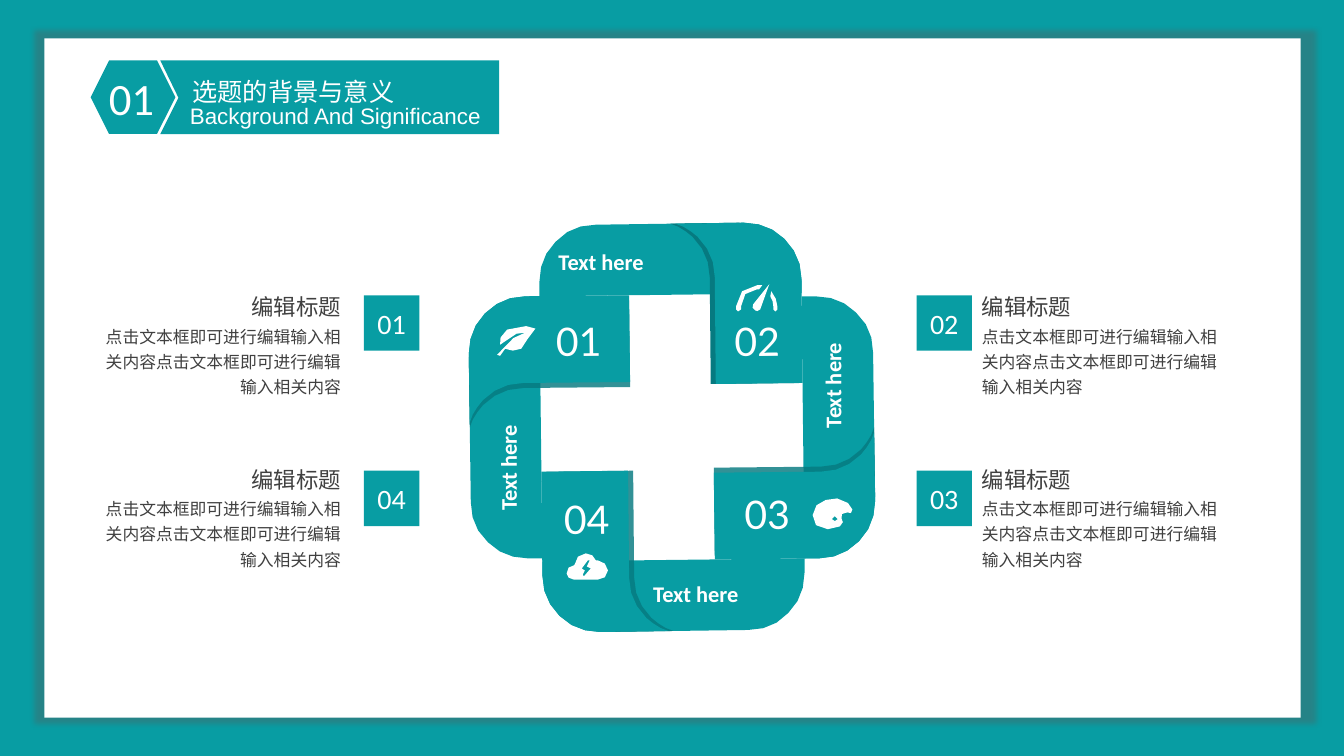
from lxml import etree
from pptx import Presentation
from pptx.dml.color import RGBColor
from pptx.enum.shapes import MSO_SHAPE as SHAPE
from pptx.enum.text import MSO_ANCHOR as ANCHOR, MSO_AUTO_SIZE as FIT, PP_ALIGN as ALIGN
from pptx.oxml import parse_xml
from pptx.oxml.ns import nsdecls, qn
from pptx.util import Inches, Pt

TEAL = RGBColor(0x08, 0x9D, 0xA3)
DARK_TEAL = RGBColor(0x06, 0x7A, 0x80)
WHITE = RGBColor(0xFF, 0xFF, 0xFF)
GRAY = RGBColor(0x40, 0x40, 0x40)
CJK = "Noto Sans CJK SC"

prs = Presentation()
prs.slide_width, prs.slide_height = Inches(13.33), Inches(7.5)
slide = prs.slides.add_slide(prs.slide_layouts[5])
slide.background.fill.solid()
slide.background.fill.fore_color.rgb = TEAL
shapes = slide.shapes


def write(holder, text, size, font, color=WHITE, align=ALIGN.LEFT, wrap=True):
    frame = holder.text_frame
    frame.text = text
    frame.word_wrap = wrap
    frame.auto_size = FIT.SHAPE_TO_FIT_TEXT
    paragraph = frame.paragraphs[0]
    paragraph.alignment = align
    run = paragraph.runs[0]
    run.font.size, run.font.name, run.font.color.rgb = Pt(size), font, color
    for properties in holder.element.iter(qn("a:rPr")):
        etree.SubElement(properties, qn("a:ea"), typeface=font)
    return paragraph


def draw(contours, color, smoothness=3):
    builder = None
    for start, *steps in contours:
        points = [start]
        for step in steps:
            if len(step) == 2:
                points.append(step)
                continue
            x0, y0 = points[-1]
            x1, y1, x2, y2, x3, y3 = step
            for i in range(1, smoothness + 1):
                t = i / smoothness
                a, b, c, d = (1 - t) ** 3, 3 * t * (1 - t) ** 2, 3 * t * t * (1 - t), t ** 3
                points.append((a * x0 + b * x1 + c * x2 + d * x3, a * y0 + b * y1 + c * y2 + d * y3))
        points = [(Inches(x), Inches(y)) for x, y in points]
        if builder is None:
            builder = shapes.build_freeform(*points[0])
        else:
            builder.move_to(*points[0])
        builder.add_line_segments(points[1:], close=True)
    outline = builder.convert_to_shape()
    outline.shadow.inherit = False
    outline.fill.solid()
    outline.fill.fore_color.rgb = color
    outline.line.fill.background()
    return outline


card = shapes.add_shape(SHAPE.RECTANGLE, Inches(0.44), Inches(0.38), Inches(12.46), Inches(6.74))
card.fill.solid()
card.fill.fore_color.rgb = WHITE
card.line.fill.background()
card.element.spPr.append(parse_xml(
    f'<a:effectLst {nsdecls("a")}><a:outerShdw blurRad="50800" dist="25400" dir="0" sx="102000" sy="102000" '
    'algn="ctr" rotWithShape="0"><a:srgbClr val="595959"><a:alpha val="36000"/></a:srgbClr>'
    '</a:outerShdw></a:effectLst>'))

draw([[(1.59, 0.6), (4.95, 0.6), (4.95, 1.33), (1.59, 1.33), (1.77, 0.97)]], TEAL)
badge = shapes.add_shape(SHAPE.HEXAGON, Inches(0.9), Inches(0.6), Inches(0.84), Inches(0.73))
badge.shadow.inherit = False
badge.fill.solid()
badge.fill.fore_color.rgb = TEAL
badge.line.fill.background()
chapter = shapes.add_textbox(Inches(0.87), Inches(0.65), Inches(0.87), Inches(0.64))
write(chapter, "01", 32, "Calibri", align=ALIGN.CENTER)

title = shapes.title
title.left, title.top, title.width, title.height = Inches(1.81), Inches(0.41), Inches(2.22), Inches(0.62)
write(title, "选题的背景与意义", 18, CJK, wrap=False).line_spacing = 2.0
title.text_frame.vertical_anchor = ANCHOR.TOP
chapter.element.addnext(title.element)
subtitle = shapes.add_textbox(Inches(0.58), Inches(0.96), Inches(5.49), Inches(0.37))
write(subtitle, "Background And Significance", 16, "Arial", align=ALIGN.CENTER)

band = [(7.78, 2.37), (7.89, 2.48, 7.95, 2.61, 7.95, 2.77), (7.95, 2.91), (5.35, 2.94), (5.35, 2.8),
        (5.35, 2.64, 5.4, 2.51, 5.51, 2.4), (5.62, 2.28, 5.75, 2.23, 5.91, 2.23), (7.38, 2.21),
        (7.53, 2.21, 7.67, 2.26, 7.78, 2.37)]
fold = [(7.38, 2.21), (7.53, 2.21, 7.67, 2.26, 7.78, 2.37), (7.89, 2.48, 7.95, 2.61, 7.95, 2.77),
        (7.96, 3.8), (7.1, 3.81), (7.09, 2.75), (7.09, 2.59, 7.03, 2.46, 6.92, 2.35),
        (6.85, 2.29, 6.78, 2.24, 6.7, 2.22)]
hubs = [(6.67, 4.24), (6.65, 4.26), (6.66, 4.24), (6.68, 4.22)]
layers = [(band, 0, TEAL, False)] * 4 + [(fold, -0.05, DARK_TEAL, True), (fold, 0, TEAL, False)] * 4
turns = [0, 1, 2, 3, 0, 0, 1, 1, 2, 2, 3, 3]
for (ribbon, shift, color, shaded), turn in zip(layers, turns):
    hub_x, hub_y = hubs[turn]
    turned = []
    for step in ribbon:
        place = []
        for x, y in zip(step[::2], step[1::2]):
            x, y = x + shift - hubs[0][0], y - hubs[0][1]
            for _ in range(turn):
                x, y = -y, x
            place += [hub_x + x, hub_y + y]
        turned.append(tuple(place))
    piece = draw([turned], color)
    if shaded and turn:
        for value in piece.element.spPr.iter(qn("a:srgbClr")):
            etree.SubElement(value, qn("a:alpha"), val="82000")

for number, x, y in [("02", 7.28, 3.14), ("03", 7.38, 4.86), ("01", 5.51, 3.14), ("04", 5.59, 4.91)]:
    label = shapes.add_textbox(Inches(x), Inches(y), Inches(0.46), Inches(0.47))
    write(label, number, 28, "Lato", align=ALIGN.CENTER, wrap=False)
    frame = label.text_frame
    frame.margin_left = frame.margin_top = frame.margin_right = frame.margin_bottom = 0
    frame.vertical_anchor = ANCHOR.BOTTOM
    label.rotation = 359.4

for x, y, angle in [(5.44, 2.41, 0), (6.38, 5.71, 0), (7.73, 3.63, 270), (4.51, 4.45, 270)]:
    caption = shapes.add_textbox(Inches(x), Inches(y), Inches(1.06), Inches(0.37))
    write(caption, "Text here", 16, "Calibri", wrap=False).runs[0].font.bold = True
    caption.rotation = angle

palette = [
    [(8.41, 4.99), (8.34, 4.94, 8.27, 4.93, 8.19, 4.96), (8.12, 4.97, 8.06, 5.04, 8.06, 5.11),
     (8.05, 5.19, 8.11, 5.25, 8.21, 5.25), (8.33, 5.25, 8.36, 5.2, 8.36, 5.18),
     (8.37, 5.17, 8.32, 5.13, 8.35, 5.1), (8.39, 5.07, 8.42, 5.09, 8.44, 5.09),
     (8.46, 5.09, 8.47, 5.03, 8.41, 4.99)],
    [(8.28, 5.17), (8.25, 5.15), (8.28, 5.12), (8.31, 5.15)]]
leaf = [
    [(5.03, 3.27), (4.95, 3.31, 4.96, 3.39, 4.96, 3.42), (5.06, 3.29, 5.21, 3.3, 5.21, 3.3),
     (5.21, 3.3, 4.99, 3.37, 4.93, 3.52), (4.96, 3.53), (5.01, 3.46),
     (5.05, 3.47, 5.12, 3.5, 5.17, 3.46), (5.23, 3.42, 5.23, 3.31, 5.31, 3.26),
     (5.34, 3.25, 5.13, 3.2, 5.03, 3.27)]]
cloud = [
    [(5.93, 5.56), (5.91, 5.56), (5.9, 5.52, 5.86, 5.49, 5.81, 5.49), (5.75, 5.49, 5.7, 5.54, 5.7, 5.6),
     (5.69, 5.61), (5.65, 5.61, 5.62, 5.64, 5.62, 5.69), (5.62, 5.72, 5.65, 5.75, 5.69, 5.75),
     (5.93, 5.75), (5.98, 5.75, 6.03, 5.72, 6.03, 5.66), (6.03, 5.61, 5.98, 5.56, 5.93, 5.56)],
    [(5.85, 5.65), (5.79, 5.72), (5.78, 5.7), (5.8, 5.66), (5.77, 5.64), (5.83, 5.56), (5.85, 5.56),
     (5.82, 5.62), (5.86, 5.64)]]
gauge = [
    [(7.47, 3.02), (7.46, 3.04, 7.46, 3.07, 7.49, 3.08), (7.5, 3.09, 7.52, 3.09, 7.54, 3.07),
     (7.63, 2.82)],
    [(7.51, 2.87), (7.53, 2.87), (7.56, 2.83), (7.51, 2.83), (7.39, 2.83, 7.3, 2.92, 7.3, 3.04),
     (7.3, 3.07), (7.32, 3.09), (7.35, 3.07), (7.35, 3.04), (7.35, 2.94, 7.41, 2.87, 7.51, 2.87)],
    [(7.65, 2.89), (7.64, 2.94), (7.66, 2.96, 7.67, 3.01, 7.67, 3.04), (7.67, 3.07), (7.69, 3.09),
     (7.71, 3.07), (7.71, 3.04), (7.71, 2.99, 7.69, 2.94, 7.65, 2.89)]]
for icon in (palette, leaf, cloud, gauge):
    draw(icon, WHITE, 2)

columns = [(3.61, 2.39, 0.86, ALIGN.RIGHT, ("01", "04")), (9.09, 9.64, 9.64, ALIGN.LEFT, ("02", "03"))]
rows = [(2.93, 2.86, 3.14), (4.67, 4.58, 4.85)]
for tile_x, heading_x, body_x, align, numbers in columns:
    for number, (tile_y, heading_y, body_y) in zip(numbers, rows):
        tile = shapes.add_shape(SHAPE.RECTANGLE, Inches(tile_x), Inches(tile_y), Inches(0.55), Inches(0.55))
        tile.shadow.inherit = False
        tile.fill.solid()
        tile.fill.fore_color.rgb = TEAL
        tile.line.fill.background()
        write(tile, number, 20, "Calibri", align=ALIGN.CENTER)
        tile.text_frame.auto_size = FIT.NONE
        tile.text_frame.vertical_anchor = ANCHOR.MIDDLE
        body = shapes.add_textbox(Inches(body_x), Inches(body_y), Inches(2.62), Inches(0.82))
        write(body, "点击文本框即可进行编辑输入相关内容点击文本框即可进行编辑输入相关内容",
              12, CJK, GRAY, align).line_spacing = 1.25
        heading = shapes.add_textbox(Inches(heading_x), Inches(heading_y), Inches(1.09), Inches(0.36))
        write(heading, "编辑标题", 16, CJK, GRAY, align)

prs.save("out.pptx")
